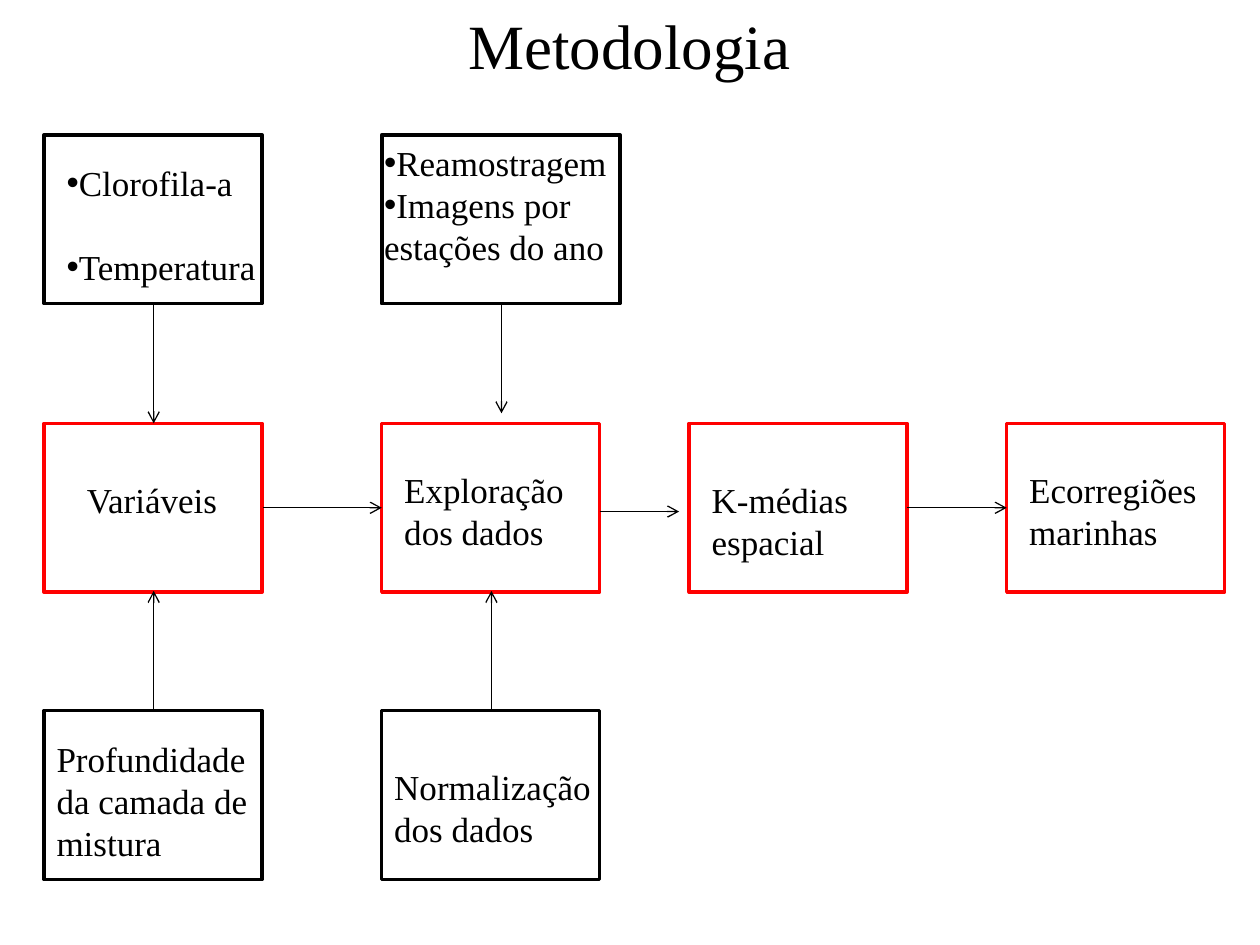
from lxml import etree
from pptx import Presentation
from pptx.dml.color import RGBColor
from pptx.enum.shapes import MSO_CONNECTOR, MSO_SHAPE
from pptx.enum.text import MSO_AUTO_SIZE, PP_ALIGN
from pptx.oxml.ns import qn
from pptx.util import Inches, Pt

RECT = MSO_SHAPE.RECTANGLE
LINE = MSO_CONNECTOR.STRAIGHT
GROW = MSO_AUTO_SIZE.SHAPE_TO_FIT_TEXT
CENTER, LEFT = PP_ALIGN.CENTER, PP_ALIGN.LEFT
FONT = "Times New Roman"
COLORS = {name: RGBColor.from_string(code) for name, code in
          {"black": "000000", "red": "FF0000"}.items()}

deck = Presentation()
deck.slide_width, deck.slide_height = Inches(10), Inches(7.5)
slide = deck.slides.add_slide(deck.slide_layouts[6])
shapes = slide.shapes


def add_text(x, y, w, h, lines, size=20, align=LEFT, bullet=False, gap=0):
    box = shapes.add_textbox(Inches(x), Inches(y), Inches(w), Inches(h))
    frame = box.text_frame
    frame.word_wrap = True
    frame.auto_size = GROW
    for i, line in enumerate(lines):
        para = frame.paragraphs[0] if i == 0 else frame.add_paragraph()
        para.alignment = align
        if i:
            para.space_before = Pt(gap)
        if bullet:
            props = para._p.get_or_add_pPr()
            etree.SubElement(props, qn("a:buFont"), typeface="Arial")
            etree.SubElement(props, qn("a:buChar"), char="•")
        run = para.add_run()
        run.text = line
        run.font.size = Pt(size)
        run.font.name = FONT
        run.font.color.rgb = COLORS["black"]


# Grid: four columns, three rows
cols = [0.35, 3.03, 5.47, 7.99]
top, mid, low = 1.07, 3.36, 5.64
wide, high = 1.73, 1.34

# Boxes: steps in red, details in black
boxes = [(x, mid, wide, "red") for x in cols]
boxes += [(x, low, wide, "black") for x in cols[:2]]
boxes += [(cols[0], top, wide, "black"), (cols[1], top, 1.89, "black")]
for x, y, w, color in boxes:
    box = shapes.add_shape(RECT, Inches(x), Inches(y), Inches(w), Inches(high))
    box.shadow.inherit = False
    box.fill.background()
    box.line.color.rgb = COLORS[color]
    box.line.width = Pt(2)

# Title
add_text(2.87, 0, 4.25, 0.71, ["Metodologia"], size=36, align=CENTER)

# Step labels
add_text(0.59, 3.75, 1.42, 0.44, ["Variáveis"])
add_text(3.11, 3.67, 2.52, 0.77, ["Exploração", "dos dados"])
add_text(5.55, 3.75, 1.42, 0.77, ["K-médias espacial"])
add_text(8.07, 3.67, 1.65, 0.77, ["Ecorregiões marinhas"])

# Detail labels
add_text(0.43, 1.23, 2.28, 1.11, ["Clorofila-a", "Temperatura"],
         bullet=True, gap=24)
add_text(2.95, 1.07, 1.97, 1.11,
         ["Reamostragem", "Imagens por estações do ano"], bullet=True)
add_text(0.35, 5.8, 1.81, 1.11, ["Profundidade", "da camada de mistura"])
add_text(3.03, 6.03, 1.81, 0.77, ["Normalização", "dos dados"])

# Arrows
arrows = [
    (1.22, 2.41, 1.22, 3.36), (3.98, 2.41, 3.98, 3.28),
    (1.22, 5.64, 1.22, 4.69), (3.9, 5.64, 3.9, 4.69),
    (2.09, 4.03, 3.03, 4.03), (4.76, 4.06, 5.39, 4.06),
    (7.2, 4.03, 7.99, 4.03),
]
for ends in arrows:
    arrow = shapes.add_connector(LINE, *[Inches(v) for v in ends])
    arrow.line.color.rgb = COLORS["black"]
    arrow.line.width = Pt(0.75)
    etree.SubElement(arrow.line._get_or_add_ln(), qn("a:tailEnd"), type="arrow")
    etree.SubElement(arrow._element.spPr, qn("a:effectLst"))

deck.save("out.pptx")
